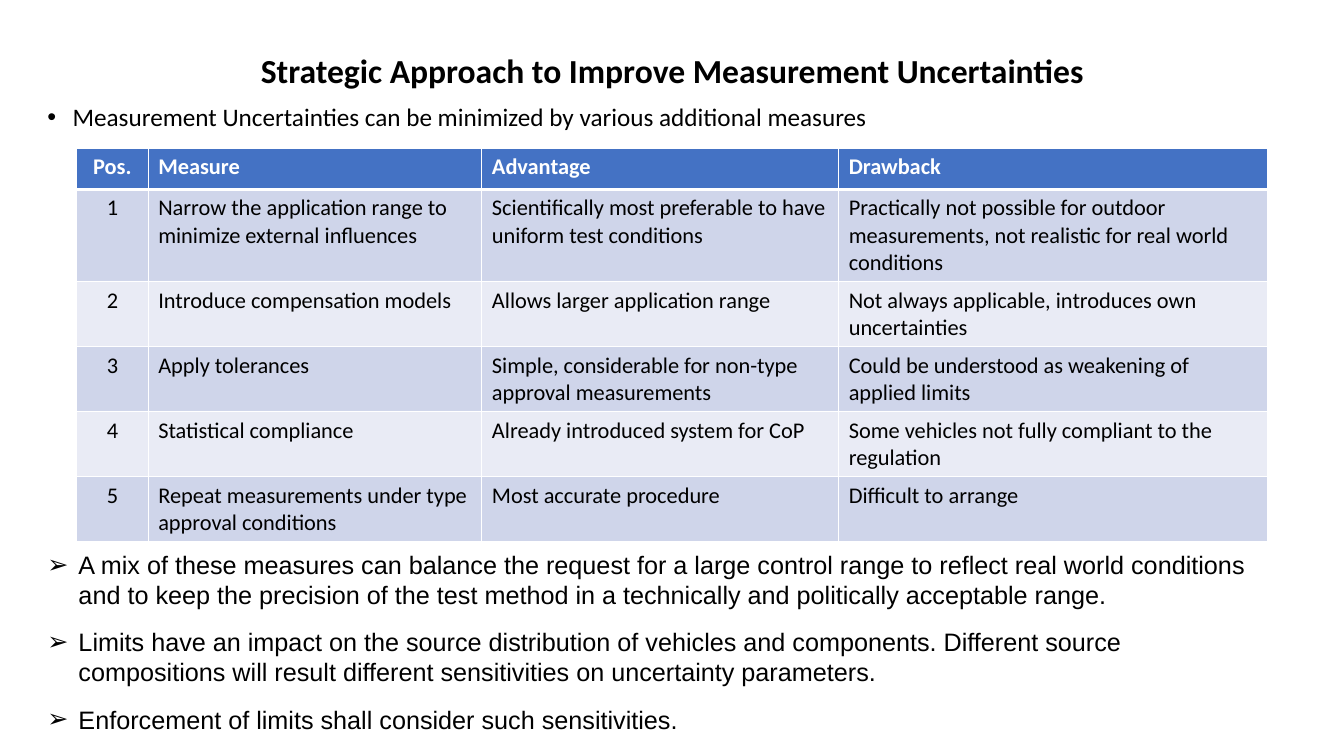
from dataclasses import dataclass

from lxml.etree import SubElement
from pptx import Presentation
from pptx.dml.color import RGBColor
from pptx.enum.text import MSO_ANCHOR, MSO_AUTO_SIZE, PP_ALIGN
from pptx.oxml.ns import qn
from pptx.util import Inches, Pt

SLIDE_WIDTH, SLIDE_HEIGHT = Inches(13.333), Inches(7.5)
BLACK, WHITE = "000000", "FFFFFF"
HEADER_FILL, BAND_FILLS = "4472C4", ("CFD5EA", "E9EBF5")
COLUMN_SHARES = (5.33, 24.83, 26.55, 31.88)
ROW_SHARES = (5.47, 12.13, 8.6, 8.6, 8.6, 8.6)


@dataclass(frozen=True)
class Area:
    """A rectangle in percent of the slide's width and height."""
    left: float
    top: float
    width: float
    height: float

    def box(self) -> tuple:
        return across(self.left), down(self.top), across(self.width), down(self.height)


@dataclass(frozen=True)
class Measure:
    name: str
    advantage: str
    drawback: str


TITLE_AREA = Area(6.9, 5.33, 86.25, 8.53)
INTRO_AREA = Area(2.78, 13.2, 92.25, 74)
TABLE_AREA = Area(5.7, 19.6, sum(COLUMN_SHARES), sum(ROW_SHARES))
CONCLUSIONS_AREA = Area(2.78, 72, 92.25, 26)

HEADINGS = ("Pos.", "Measure", "Advantage", "Drawback")
MEASURES = (
    Measure("Narrow the application range to minimize external influences",
            "Scientifically most preferable to have uniform test conditions",
            "Practically not possible for outdoor measurements, not realistic for real world conditions"),
    Measure("Introduce compensation models", "Allows larger application range",
            "Not always applicable, introduces own uncertainties"),
    Measure("Apply tolerances", "Simple, considerable for non-type approval measurements",
            "Could be understood as weakening of applied limits"),
    Measure("Statistical compliance", "Already introduced system for CoP",
            "Some vehicles not fully compliant to the regulation"),
    Measure("Repeat measurements under type approval conditions", "Most accurate procedure",
            "Difficult to arrange"),
)
CONCLUSIONS = (
    "A mix of these measures can balance the request for a large control range to reflect "
    "real world conditions and to keep the precision of the test method in a technically "
    "and politically acceptable range.",
    "Limits have an impact on the source distribution of vehicles and components. Different "
    "source compositions will result different sensitivities on uncertainty parameters.",
    "Enforcement of limits shall consider such sensitivities.",
)


def across(percent: float) -> int:
    return round(SLIDE_WIDTH * percent / 100)


def down(percent: float) -> int:
    return round(SLIDE_HEIGHT * percent / 100)


def color(value: str) -> RGBColor:
    return RGBColor.from_string(value)


def place(shape, area: Area) -> None:
    shape.left, shape.top, shape.width, shape.height = area.box()


def format_runs(paragraph, size: int, face: str = "Calibri", tint: str = BLACK,
                bold: bool = False) -> None:
    for run in paragraph.runs:
        run.font.size, run.font.name, run.font.bold = Pt(size), face, bold
        run.font.color.rgb = color(tint)


def add_bullet(paragraph, symbol: str, indent: float) -> None:
    properties = paragraph._p.get_or_add_pPr()
    properties.set("marL", str(Inches(indent)))
    properties.set("indent", str(-Inches(indent)))
    SubElement(properties, qn("a:buFont"), typeface="Arial")
    SubElement(properties, qn("a:buChar"), char=symbol)


def add_borders(cell, top: int, bottom: int) -> None:
    """Draw white borders; top and bottom are widths in points."""
    properties = cell._tc.get_or_add_tcPr()
    for side, width in (("L", 1), ("R", 1), ("T", top), ("B", bottom)):
        line = SubElement(properties, qn(f"a:ln{side}"), w=str(Pt(width)))
        SubElement(SubElement(line, qn("a:solidFill")), qn("a:srgbClr"), val=WHITE)


def fill_title(title) -> None:
    place(title, TITLE_AREA)
    frame = title.text_frame
    frame.text = "Strategic Approach to Improve Measurement Uncertainties"
    frame.vertical_anchor = MSO_ANCHOR.MIDDLE
    frame.auto_size = MSO_AUTO_SIZE.NONE
    heading = frame.paragraphs[0]
    heading.alignment, heading.line_spacing = PP_ALIGN.CENTER, 0.9
    format_runs(heading, 24, bold=True)


def fill_intro(body) -> None:
    place(body, INTRO_AREA)
    frame = body.text_frame
    frame.text = "Measurement Uncertainties can be minimized by various additional measures"
    frame.auto_size = MSO_AUTO_SIZE.NONE
    statement = frame.paragraphs[0]
    add_bullet(statement, "•", 0.25)
    statement.line_spacing, statement.space_before = 0.9, Pt(0)
    format_runs(statement, 18)


def add_measures_table(slide) -> None:
    rows = [HEADINGS] + [(str(position), m.name, m.advantage, m.drawback)
                         for position, m in enumerate(MEASURES, 1)]
    table = slide.shapes.add_table(len(rows), len(HEADINGS), *TABLE_AREA.box()).table
    for column, share in zip(table.columns, COLUMN_SHARES):
        column.width = across(share)
    for row, share in zip(table.rows, ROW_SHARES):
        row.height = down(share)
    for r, texts in enumerate(rows):
        is_header = r == 0
        for c, text in enumerate(texts):
            cell = table.cell(r, c)
            cell.text = text
            add_borders(cell, top=3 if r == 1 else 1, bottom=3 if is_header else 1)
            cell.fill.solid()
            cell.fill.fore_color.rgb = color(HEADER_FILL if is_header else BAND_FILLS[(r - 1) % 2])
            entry = cell.text_frame.paragraphs[0]
            entry.alignment = PP_ALIGN.CENTER if c == 0 else PP_ALIGN.LEFT
            format_runs(entry, 16, tint=WHITE if is_header else BLACK, bold=is_header)


def add_conclusions(slide) -> None:
    frame = slide.shapes.add_textbox(*CONCLUSIONS_AREA.box()).text_frame
    frame.word_wrap = True
    frame.text = "\n".join(CONCLUSIONS)
    for conclusion in frame.paragraphs:
        add_bullet(conclusion, "➢", 0.31)
        conclusion.space_after = Pt(12)
        format_runs(conclusion, 18, face="Arial")


def main() -> None:
    deck = Presentation()
    deck.slide_width, deck.slide_height = SLIDE_WIDTH, SLIDE_HEIGHT
    slide = deck.slides.add_slide(deck.slide_layouts[1])
    fill_title(slide.shapes.title)
    fill_intro(slide.placeholders[1])
    add_measures_table(slide)
    add_conclusions(slide)
    deck.save("out.pptx")


if __name__ == "__main__":
    main()
